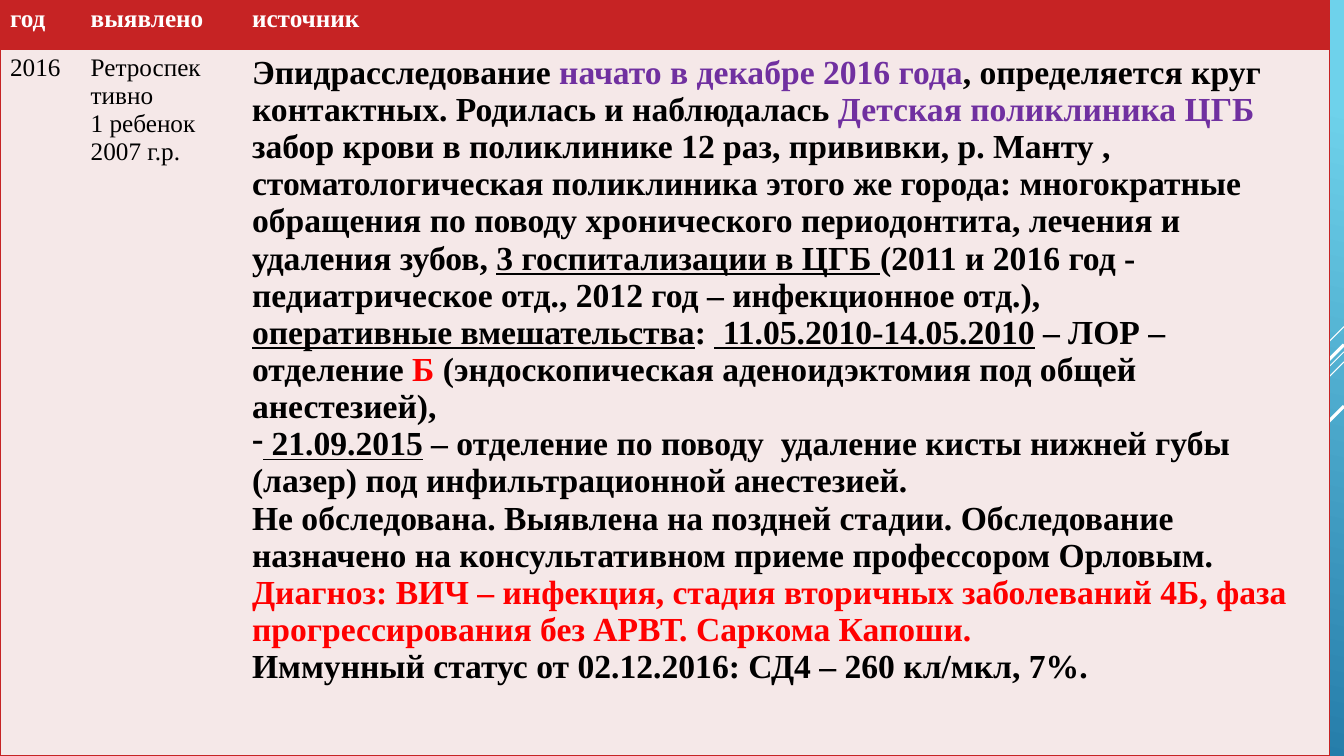
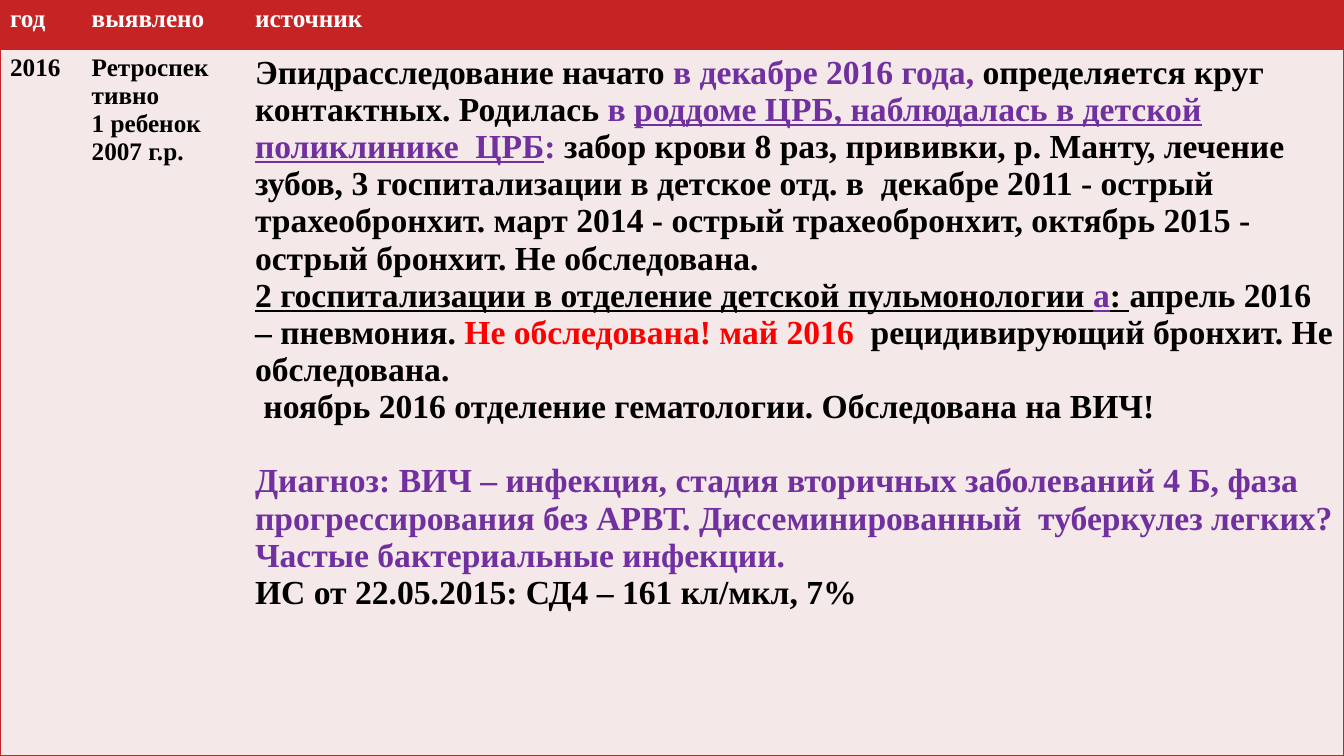
from dataclasses import dataclass
from typing import NamedTuple

from lxml import etree
from pptx import Presentation
from pptx.dml.color import RGBColor
from pptx.enum.shapes import MSO_CONNECTOR
from pptx.enum.text import PP_ALIGN
from pptx.oxml.ns import qn
from pptx.util import Inches, Pt

STRAIGHT = MSO_CONNECTOR.STRAIGHT
JUSTIFY = PP_ALIGN.JUSTIFY
WIDTH, HEIGHT = 13.33, 7.5
HEADER_HEIGHT = 0.49


@dataclass(frozen=True)
class Theme:
    font: str = "Times New Roman"
    small: float = 18
    large: float = 24
    line_gap: float = 26.5
    white: str = "FFFFFF"
    black: str = "000000"
    purple: str = "7030A0"
    red: str = "FF0000"
    header: str = "C62324"
    body: str = "F5E8E8"
    sky: str = "6ED2EB"
    sea: str = "06588E"


THEME = Theme()


class Run(NamedTuple):
    text: str
    color: str = THEME.black
    underline: bool = False


class Para(NamedTuple):
    runs: list[Run]
    bullet: str = ""
    space_before: float = 0


class Ray(NamedTuple):
    top: float
    reach: float
    weight: float


class Case(NamedTuple):
    columns: list[float]
    bold_labels: bool
    story: list[Para]


RAYS = [
    Ray(3.24, 1, 0.75),
    Ray(3.49, 3.26, 0.75),
    Ray(3.59, 2.07, 0.75),
    Ray(3.42, 1.91, 2.25),
    Ray(4.03, 1.39, 2.25),
]
HEADINGS = ["год", "выявлено", "источник"]
LABELS = [["2016"], ["Ретроспек", "тивно", "1 ребенок", "2007 г.р."]]

CASES = [
    Case([0.8, 1.6, 10.79], False, [
        Para([
            Run("Эпидрасследование "),
            Run("начато в декабре 2016 года", THEME.purple),
            Run(", определяется круг контактных. Родилась и наблюдалась "),
            Run("Детская поликлиника ЦГБ ", THEME.purple),
            Run(" забор крови в поликлинике 12 раз, прививки, р. Манту , "
                "стоматологическая поликлиника этого же города: многократные "
                "обращения по поводу хронического периодонтита, лечения и "
                "удаления зубов, "),
            Run("3 госпитализации в ЦГБ ", underline=True),
            Run("(2011 и 2016 год - педиатрическое отд., "
                "2012 год – инфекционное отд.),"),
        ]),
        Para([
            Run("оперативные вмешательства", underline=True),
            Run(": "),
            Run(" 11.05.2010-14.05.2010", underline=True),
            Run(" – ЛОР – отделение "),
            Run("Б ", THEME.red),
            Run("(эндоскопическая аденоидэктомия под общей анестезией),"),
        ]),
        Para([
            Run(" 21.09.2015", underline=True),
            Run(" – отделение по поводу  удаление кисты нижней губы (лазер) "
                "под инфильтрационной анестезией."),
        ], bullet="-"),
        Para([Run("Не обследована. Выявлена на поздней стадии. Обследование "
                  "назначено на консультативном приеме профессором Орловым.")]),
        Para([Run("Диагноз: ВИЧ – инфекция, стадия вторичных заболеваний 4Б, фаза "
                  "прогрессирования без АРВТ. Саркома Капоши.", THEME.red)]),
        Para([Run("Иммунный статус от 02.12.2016: СД4 – 260 кл/мкл, 7%.")]),
    ]),
    Case([0.81, 1.62, 10.9], True, [
        Para([
            Run("Эпидрасследование начато "),
            Run("в декабре 2016 года, ", THEME.purple),
            Run("определяется круг контактных. Родилась "),
            Run("в ", THEME.purple),
            Run("роддоме ЦРБ, наблюдалась в детской поликлинике  ЦРБ",
                THEME.purple, True),
            Run(": ", THEME.purple),
            Run("забор крови 8 раз, прививки, р. Манту, лечение зубов, "
                "3 госпитализации в детское отд. в  декабре 2011 - острый "
                "трахеобронхит. март 2014 - острый трахеобронхит, "
                "октябрь 2015 - острый бронхит. Не обследована."),
        ]),
        Para([
            Run("2 госпитализации в отделение детской пульмонологии ", underline=True),
            Run("а", THEME.purple, True),
            Run(": ", underline=True),
            Run("апрель 2016 – пневмония. "),
            Run("Не обследована! май 2016  ", THEME.red),
            Run("рецидивирующий бронхит. Не обследована."),
        ]),
        Para([Run(" ноябрь 2016 отделение гематологии. Обследована на ВИЧ!")]),
        Para([Run("Диагноз: ВИЧ – инфекция, стадия вторичных заболеваний 4 Б, фаза "
                  "прогрессирования без АРВТ. Диссеминированный  туберкулез легких? "
                  "Частые бактериальные инфекции.", THEME.purple)],
             space_before=THEME.line_gap),
        Para([Run("ИС от 22.05.2015: СД4 – 161 кл/мкл, 7%")]),
    ]),
]


def plain(lines: list[str], color: str = THEME.black) -> list[Para]:
    return [Para([Run(line, color)]) for line in lines]


def draw_backdrop(s) -> None:
    fill = s.background.fill
    fill.gradient()
    fill.gradient_angle = 360 - 102
    stops = [(0.1, THEME.sky), (1, THEME.sea)]
    for stop, (position, color) in zip(fill.gradient_stops, stops):
        stop.position = position
        stop.color.rgb = RGBColor.from_string(color)
    for ray in RAYS:
        line = s.shapes.add_connector(
            STRAIGHT, Inches(WIDTH), Inches(ray.top),
            Inches(WIDTH - ray.reach), Inches(ray.top + ray.reach))
        line.line.color.rgb = RGBColor.from_string(THEME.white)
        line.line.width = Pt(ray.weight)
        etree.SubElement(line._element.spPr, qn("a:effectLst"))


def set_borders(cell, sides: str) -> None:
    """Draw the named sides (from L, R, T, B) and clear the others."""
    tc_pr = cell._tc.get_or_add_tcPr()
    for side in "LRTB":
        ln = etree.SubElement(tc_pr, qn(f"a:ln{side}"), w=str(Pt(1)))
        if side in sides:
            fill = etree.SubElement(ln, qn("a:solidFill"))
            etree.SubElement(fill, qn("a:srgbClr"), val=THEME.header)
        else:
            etree.SubElement(ln, qn("a:noFill"))


def write(tf, paras: list[Para], size: float, bold: bool) -> None:
    for i, para in enumerate(paras):
        p = tf.add_paragraph() if i else tf.paragraphs[0]
        if para.space_before:
            p.space_before = Pt(para.space_before)
        if para.bullet:
            p_pr = p._p.get_or_add_pPr()
            p_pr.set("marL", "0")
            p_pr.set("indent", "0")
            etree.SubElement(p_pr, qn("a:buFontTx"))
            etree.SubElement(p_pr, qn("a:buChar"), char=para.bullet)
        for run in para.runs:
            r = p.add_run()
            r.text = run.text
            formats = {"name": THEME.font, "size": Pt(size), "bold": bold,
                       "underline": run.underline}
            for name, value in formats.items():
                setattr(r.font, name, value)
            r.font.color.rgb = RGBColor.from_string(run.color)


def draw_table(s, case: Case) -> None:
    rows = [HEADER_HEIGHT, HEIGHT - HEADER_HEIGHT]
    last = len(case.columns) - 1
    table = s.shapes.add_table(
        len(rows), len(case.columns), Inches(0), Inches(0),
        Inches(sum(case.columns)), Inches(HEIGHT)).table
    table.horz_banding = False
    for row, height in zip(table.rows, rows):
        row.height = Inches(height)
    body = [plain(lines) for lines in LABELS] + [case.story]
    for col, width in enumerate(case.columns):
        table.columns[col].width = Inches(width)
        is_story = col == last
        sides = "TB" + ("L" if col == 0 else "") + ("R" if is_story else "")
        contents = [
            (plain([HEADINGS[col]], THEME.white), THEME.header, THEME.small, True),
            (body[col], THEME.body, THEME.large if is_story else THEME.small,
             is_story or case.bold_labels),
        ]
        for row, (paras, color, size, bold) in enumerate(contents):
            cell = table.cell(row, col)
            set_borders(cell, sides)
            cell.fill.solid()
            cell.fill.fore_color.rgb = RGBColor.from_string(color)
            write(cell.text_frame, paras, size, bold)
    table.cell(0, last).text_frame.paragraphs[0].alignment = JUSTIFY


def main() -> None:
    prs = Presentation()
    prs.slide_width, prs.slide_height = Inches(WIDTH), Inches(HEIGHT)
    for case in CASES:
        s = prs.slides.add_slide(prs.slide_layouts[6])
        draw_backdrop(s)
        draw_table(s, case)
    prs.save("out.pptx")


if __name__ == "__main__":
    main()
